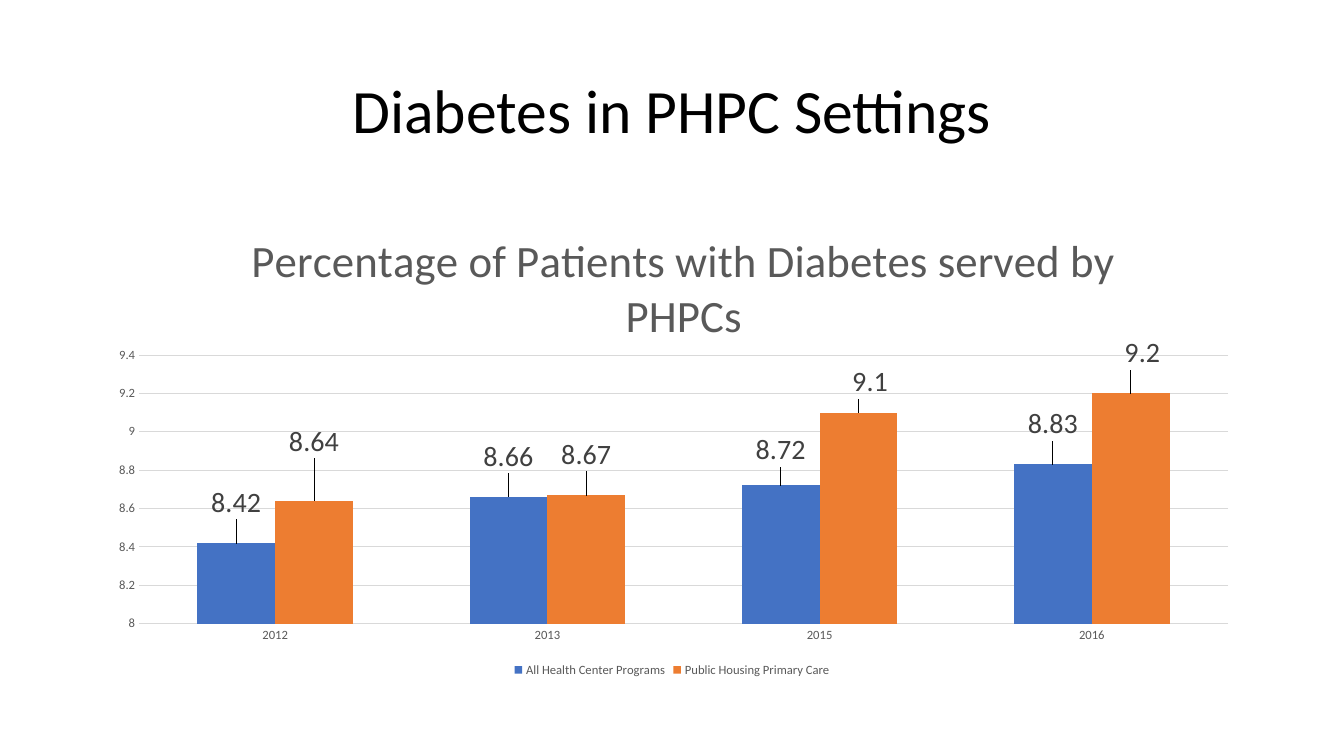
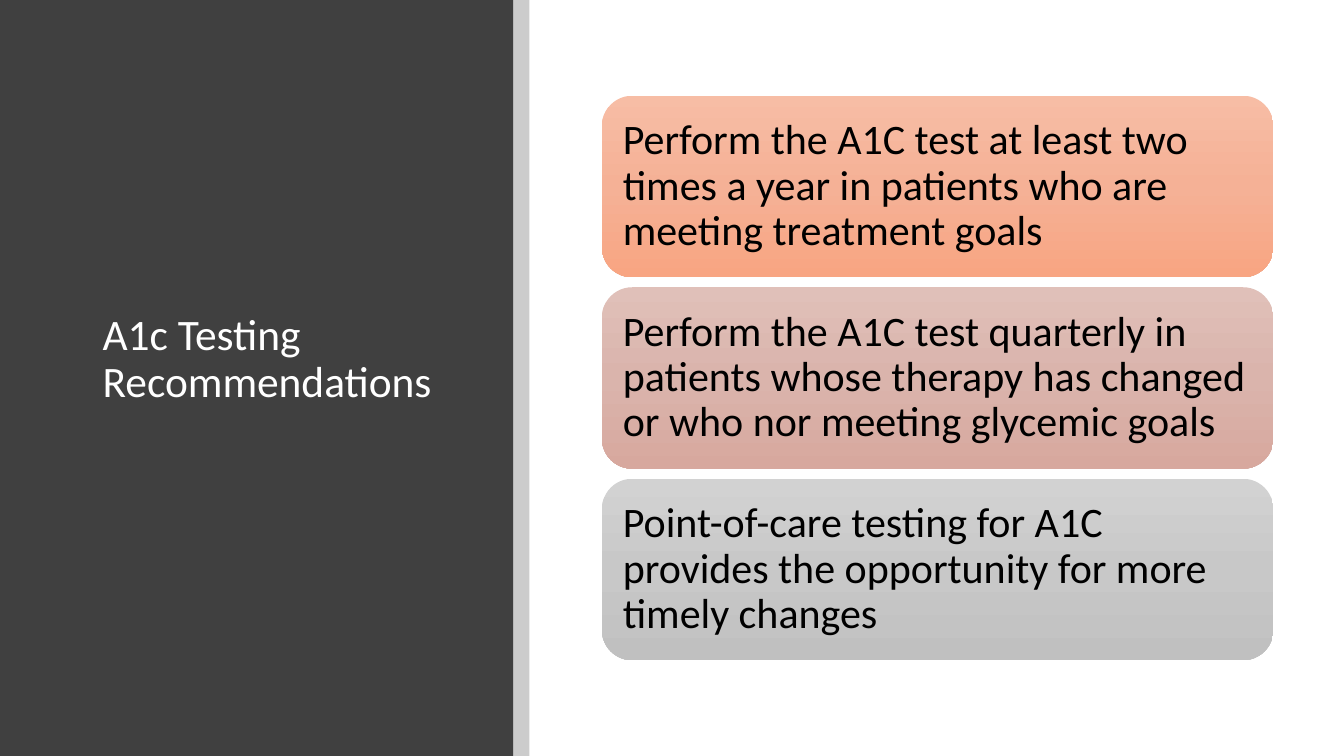
import copy

from lxml import etree
from pptx import Presentation
from pptx import util as u
from pptx.chart import data as chart_data
from pptx.dml import color
from pptx.enum import chart as chart_enum, shapes, text
from pptx.oxml import ns

FONT = "Calibri"
BLACK, WHITE, DARK, GREY, GRID = "000000", "FFFFFF", "404040", "595959", "D9D9D9"
SLIDE_W, SLIDE_H = 13.33, 7.5
MARGIN = 0.92
PANEL_W, STRIP_W = 5.09, 0.16

YEARS = ["2012", "2013", "2015", "2016"]
# name, colour, values, label shifts as fractions of the chart
SERIES = [
    ("All Health Center Programs", "4472C4", [8.42, 8.66, 8.72, 8.83],
     [(0, -0.04), (0, -0.04), (0, -0.03), (0, -0.04)]),
    ("Public Housing Primary Care", "ED7D31", [8.64, 8.67, 9.1, 9.2],
     [(0, -0.08), (0, -0.04), (0.01, -0.02), (0.01, -0.04)]),
]
CARDS = [
    ("Perform the A1C test at least two times a year in patients who are "
     "meeting treatment goals", ["F7BDA5", "F5B196", "F8A582"]),
    ("Perform the A1C test quarterly in patients whose therapy has changed "
     "or who nor meeting glycemic goals", ["E0C0B9", "DAB4AC", "D7A89E"]),
    ("Point-of-care testing for A1C provides the opportunity for more "
     "timely changes", ["D2D2D2", "C8C8C8", "C0C0C0"]),
]


def rgb(value):
    return color.RGBColor.from_string(value)


def style_font(font, size, value):
    font.name = FONT
    font.size = u.Pt(size)
    font.color.rgb = rgb(value)


def write(shape, words, size, value, align=text.PP_ALIGN.LEFT):
    frame = shape.text_frame
    frame.word_wrap = True
    frame.vertical_anchor = text.MSO_ANCHOR.MIDDLE
    frame.text = words
    para = frame.paragraphs[0]
    para.alignment = align
    para.line_spacing = 0.9
    for span in para.runs:
        style_font(span.font, size, value)
    return frame


def add_title(page, box, words, size, value, align=text.PP_ALIGN.LEFT):
    title = page.shapes.add_textbox(*map(u.Inches, box))
    write(title, words, size, value, align)


def add_block(page, kind, box):
    block = page.shapes.add_shape(kind, *map(u.Inches, box))
    block.shadow.inherit = False
    block.line.fill.background()
    return block


def add_solid(page, box, value, opacity=None):
    block = add_block(page, shapes.MSO_SHAPE.RECTANGLE, box)
    block.fill.solid()
    block.fill.fore_color.rgb = rgb(value)
    if opacity is not None:
        tone = block._element.spPr.find(ns.qn("a:solidFill"))[0]
        etree.SubElement(tone, ns.qn("a:alpha")).set("val", str(opacity * 1000))


def manual_layout(x, y, **extra):
    """Build a c:layout element from fractions of the chart."""
    layout = etree.Element(ns.qn("c:layout"))
    manual = etree.SubElement(layout, ns.qn("c:manualLayout"))
    for tag, value in {**extra, "x": x, "y": y}.items():
        etree.SubElement(manual, ns.qn("c:" + tag)).set("val", str(value))
    return layout


def place_plot(chart, x, y, w, h):
    layout = manual_layout(x, y, layoutTarget="inner", xMode="edge", yMode="edge")
    for tag, value in (("w", w), ("h", h)):
        etree.SubElement(layout[0], ns.qn("c:" + tag)).set("val", str(value))
    plot_area = chart._chartSpace.chart.plotArea
    for old in plot_area.findall(ns.qn("c:layout")):
        plot_area.remove(old)
    plot_area.insert(0, layout)


def add_chart_title(chart, words):
    chart.has_title = True
    title = chart.chart_title
    title.text_frame.text = words
    font = title.text_frame.paragraphs[0].runs[0].font
    style_font(font, 32, GREY)
    font.bold = False
    element = title._element
    for old in element.findall(ns.qn("c:layout")):
        element.remove(old)
    element.find(ns.qn("c:tx")).addnext(
        manual_layout(0.13, 0.04, xMode="edge", yMode="edge"))
    title.include_in_layout = False


def style_axes(chart):
    for axis in (chart.category_axis, chart.value_axis):
        axis.major_tick_mark = chart_enum.XL_TICK_MARK.NONE
        axis.minor_tick_mark = chart_enum.XL_TICK_MARK.NONE
        axis.format.line.fill.background()
        style_font(axis.tick_labels.font, 9, GREY)
    scale = chart.value_axis
    scale.minimum_scale, scale.maximum_scale, scale.major_unit = 8, 9.4, 0.2
    scale.has_major_gridlines = True
    line = scale.major_gridlines.format.line
    line.color.rgb = rgb(GRID)
    line.width = u.Pt(0.75)


def style_series(series, value, shifts):
    series.format.fill.solid()
    series.format.fill.fore_color.rgb = rgb(value)
    series.smooth = False
    labels = series.data_labels
    labels.show_value = True
    labels.position = chart_enum.XL_LABEL_POSITION.OUTSIDE_END
    style_font(labels.font, 20, DARK)
    for index in range(len(shifts)):
        label = series.points[index].data_label
        style_font(label.font, 20, DARK)
        label.position = chart_enum.XL_LABEL_POSITION.OUTSIDE_END
    for element, shift in zip(series._element.xpath("c:dLbls/c:dLbl"), shifts):
        element.insert(1, manual_layout(*shift))


def add_column_chart(page, box):
    content = chart_data.CategoryChartData()
    content.categories = YEARS
    for name, _, values, _ in SERIES:
        content.add_series(name, values)
    chart = page.shapes.add_chart(
        chart_enum.XL_CHART_TYPE.COLUMN_CLUSTERED, *map(u.Inches, box), content).chart
    style_font(chart.font, 10, BLACK)
    add_chart_title(chart, "Percentage of Patients with Diabetes served by PHPCs")
    place_plot(chart, 0.04, 0.32, 0.94, 0.56)
    style_axes(chart)
    chart.has_legend = True
    chart.legend.position = chart_enum.XL_LEGEND_POSITION.BOTTOM
    chart.legend.include_in_layout = False
    style_font(chart.legend.font, 9, GREY)
    plot = chart.plots[0]
    plot.vary_by_categories = False
    plot.gap_width = 150
    plot.overlap = 0
    for series, (_, value, _, shifts) in zip(plot.series, SERIES):
        style_series(series, value, shifts)


def add_card(page, box, words, tones):
    card = add_block(page, shapes.MSO_SHAPE.ROUNDED_RECTANGLE, box)
    card.fill.gradient()
    card.fill.gradient_angle = 270
    stops = card._element.xpath(".//a:gsLst")[0]
    stops.append(copy.deepcopy(stops[0]))
    for index, (stop, tone) in enumerate(zip(card.fill.gradient_stops, tones)):
        stop.position = index / 2
        stop.color.rgb = rgb(tone)
    frame = write(card, words, 30, BLACK)
    # The rounded corner already insets the text by about 0.09
    frame.margin_left = frame.margin_right = u.Inches(0.12)
    frame.margin_top = frame.margin_bottom = u.Inches(0.12)


def add_card_stack(page, box, gap):
    left, top, width, height = box
    card_h = (height - gap * (len(CARDS) - 1)) / len(CARDS)
    for index, (words, tones) in enumerate(CARDS):
        add_card(page, (left, top + index * (card_h + gap), width, card_h), words, tones)


def build_chart_slide(page):
    width = SLIDE_W - 2 * MARGIN
    add_title(page, (MARGIN, 0.4, width, 1.45), "Diabetes in PHPC Settings",
              44, BLACK, text.PP_ALIGN.CENTER)
    add_column_chart(page, (MARGIN, 2, width, 4.76))


def build_card_slide(page):
    # Dark side panel with its translucent edge
    add_solid(page, (0, 0, PANEL_W, SLIDE_H), DARK)
    add_solid(page, (PANEL_W, 0, STRIP_W, SLIDE_H), BLACK, opacity=20)
    add_title(page, (MARGIN, 0.62, 3.65, 5.91), "A1c Testing Recommendations", 31, WHITE)
    # Recommendations
    add_card_stack(page, (5.97, 0.95, 6.66, 5.6), gap=0.1)


def main():
    deck = Presentation()
    deck.slide_width, deck.slide_height = u.Inches(SLIDE_W), u.Inches(SLIDE_H)
    for build in (build_chart_slide, build_card_slide):
        build(deck.slides.add_slide(deck.slide_layouts[6]))
    deck.save("out.pptx")


if __name__ == "__main__":
    main()
